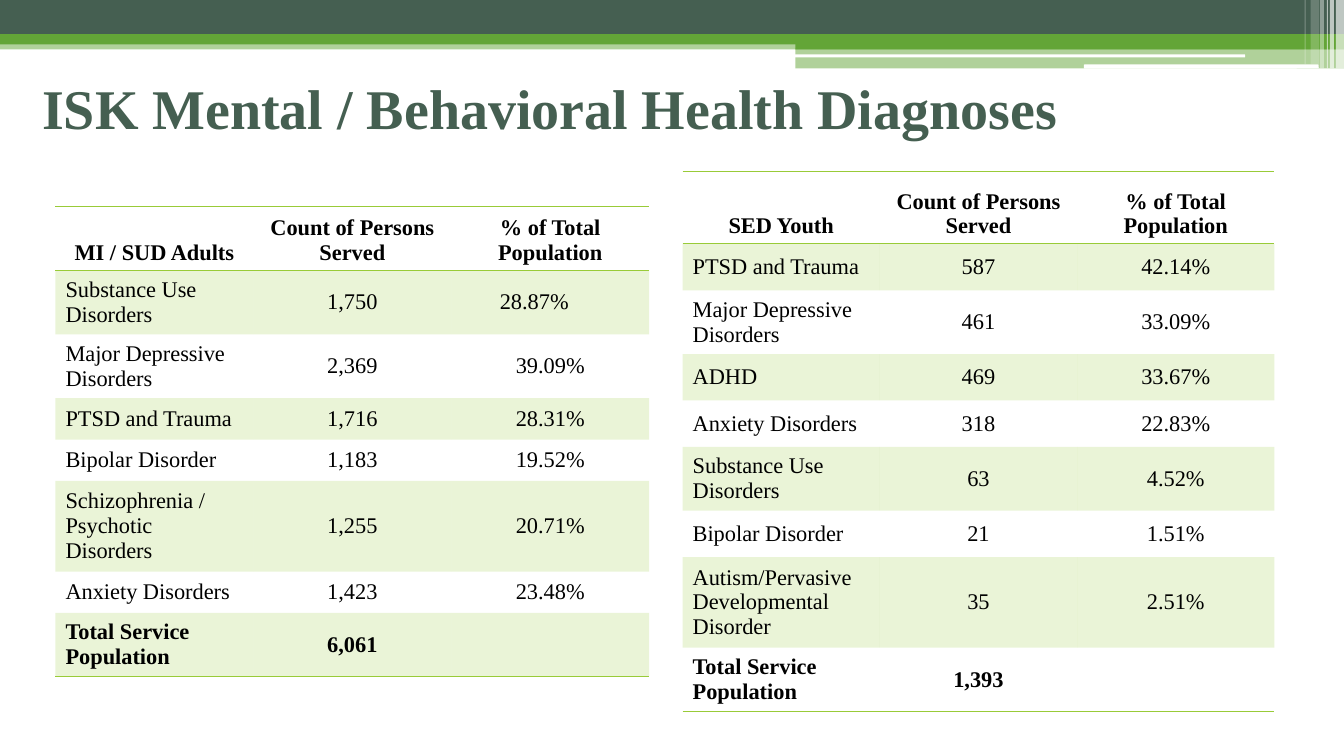
import pptx
import pptx.util
import pptx.dml.color
import pptx.enum.shapes
import pptx.enum.text
import lxml.etree

Inches = pptx.util.Inches
Pt = pptx.util.Pt
Shape = pptx.enum.shapes.MSO_SHAPE
Align = pptx.enum.text.PP_ALIGN
Anchor = pptx.enum.text.MSO_ANCHOR
qn = pptx.oxml.ns.qn

COLOURS = {
    "slate": "455F51",
    "green": "63A537",
    "lime": "99CB38",
    "white": "FFFFFF",
    "black": "000000",
}

# left, top, width, height, colour, opacity in percent
BANDS = [
    (0, 0.4, 13.33, 0.09, "green", 50),
    (0, 0, 13.33, 0.34, "slate", 100),
    (0, 0.34, 13.33, 0.1, "green", 100),
    (7.89, 0.39, 5.44, 0.1, "green", 100),
    (7.89, 0.48, 5.44, 0.2, "green", 50),
]
SLITS = [
    (7.88, 0.54, 4.47, 0.03, "white", 100),
    (10.75, 0.64, 2.33, 0.04, "white", 100),
]
# left, width, height, opacity in percent
STRIPES = [
    (13.25, 0.08, 0.68, 65),
    (13.19, 0.04, 0.68, 65),
    (13.16, 0.01, 0.68, 60),
    (13.09, 0.04, 0.68, 40),
    (13, 0.08, 0.64, 20),
    (12.94, 0.01, 0.64, 30),
]

ADULTS = [
    ("MI / SUD Adults", "Count of Persons Served", "% of Total Population"),
    ("Substance Use Disorders", "1,750", "28.87% \t"),
    ("Major Depressive Disorders", "2,369", "39.09%"),
    ("PTSD and Trauma", "1,716", "28.31%"),
    ("Bipolar Disorder", "1,183", "19.52%"),
    ("Schizophrenia / Psychotic Disorders", "1,255", "20.71%"),
    ("Anxiety Disorders", "1,423", "23.48%"),
    ("Total Service Population", "6,061", ""),
]
YOUTH = [
    ("SED Youth", "Count of Persons Served", "% of Total Population"),
    ("PTSD and Trauma", "587", "42.14%"),
    ("Major Depressive Disorders", "461", "33.09%"),
    ("ADHD", "469", "33.67%"),
    ("Anxiety Disorders", "318", "22.83%"),
    ("Substance Use Disorders", "63", "4.52%"),
    ("Bipolar Disorder", "21", "1.51%"),
    ("Autism/Pervasive Developmental Disorder", "35", "2.51%"),
    ("Total Service Population", "1,393", ""),
]


class Painter:
    FONT = "Times New Roman"
    PLAIN_TABLE = "{2D5ABB26-0587-4C30-8999-92F81FD0307C}"

    def __init__(self, page):
        self.page = page

    def colour(self, name):
        return pptx.dml.color.RGBColor.from_string(COLOURS[name])

    def paint(self, fill, name, opacity, holder):
        """Fill solidly; holder is the XML element that contains the fill."""
        fill.solid()
        fill.fore_color.rgb = self.colour(name)
        if opacity < 100:
            tint = holder.find(qn("a:solidFill"))[0]
            lxml.etree.SubElement(tint, qn("a:alpha"), val=str(opacity * 1000))

    def bar(self, left, top, width, height, name, opacity, kind=Shape.RECTANGLE):
        shape = self.page.shapes.add_shape(
            kind, Inches(left), Inches(top), Inches(width), Inches(height))
        shape.shadow.inherit = False
        shape.line.fill.background()
        self.paint(shape.fill, name, opacity, shape._element.spPr)

    def set_text(self, frame, text, size, name, bold, align):
        frame.text = text
        para = frame.paragraphs[0]
        para.alignment = align
        for span in para.runs:
            span.font.name = self.FONT
            span.font.size = Pt(size)
            span.font.bold = bold
            span.font.color.rgb = self.colour(name)

    def title(self, text, left, top, width, height):
        box = self.page.shapes.add_textbox(
            Inches(left), Inches(top), Inches(width), Inches(height))
        box.text_frame.word_wrap = True
        box.text_frame.vertical_anchor = Anchor.MIDDLE
        self.set_text(box.text_frame, text, 40, "slate", True, Align.LEFT)

    def rule(self, cell, side):
        """Draw a thin lime line on one side of a cell: lnT or lnB."""
        edge = lxml.etree.SubElement(
            cell._tc.get_or_add_tcPr(), qn("a:" + side), w=str(Pt(1)))
        fill = lxml.etree.SubElement(edge, qn("a:solidFill"))
        lxml.etree.SubElement(fill, qn("a:srgbClr"), val=COLOURS["lime"])

    def table(self, rows, left, top, width, header_height, row_height):
        heights = [header_height] + [row_height] * (len(rows) - 1)
        frame = self.page.shapes.add_table(
            len(rows), len(rows[0]), Inches(left), Inches(top),
            Inches(width), Inches(sum(heights)))
        grid = frame.table
        grid._tbl.tblPr.find(qn("a:tableStyleId")).text = self.PLAIN_TABLE
        for r, (row, height) in enumerate(zip(rows, heights)):
            grid.rows[r].height = Inches(height)
            header, total = r == 0, r == len(rows) - 1
            for c, text in enumerate(row):
                cell = grid.cell(r, c)
                cell.vertical_anchor = Anchor.BOTTOM if header else Anchor.MIDDLE
                align = Align.CENTER if header or c else Align.LEFT
                self.set_text(cell.text_frame, text, 16, "black", header or total, align)
                if header:
                    self.rule(cell, "lnT")
                if header or total:
                    self.rule(cell, "lnB")
                if r % 2:
                    self.paint(cell.fill, "lime", 20, cell._tc.tcPr)
                else:
                    cell.fill.background()


def main():
    deck = pptx.Presentation()
    deck.slide_width, deck.slide_height = Inches(13.33), Inches(7.5)
    painter = Painter(deck.slides.add_slide(deck.slide_layouts[6]))

    for band in BANDS:
        painter.bar(*band)
    for slit in SLITS:
        painter.bar(*slit, kind=Shape.ROUNDED_RECTANGLE)
    for left, width, height, opacity in STRIPES:
        painter.bar(left, 0, width, height, "white", opacity)

    painter.title("ISK Mental / Behavioral Health Diagnoses", 0.32, 0.48, 12, 1.17)
    painter.table(ADULTS, 0.55, 2.05, 5.89, 0.41, 0.41)
    painter.table(YOUTH, 6.77, 1.7, 5.87, 0.72, 0.46)
    deck.save("out.pptx")


if __name__ == "__main__":
    main()
